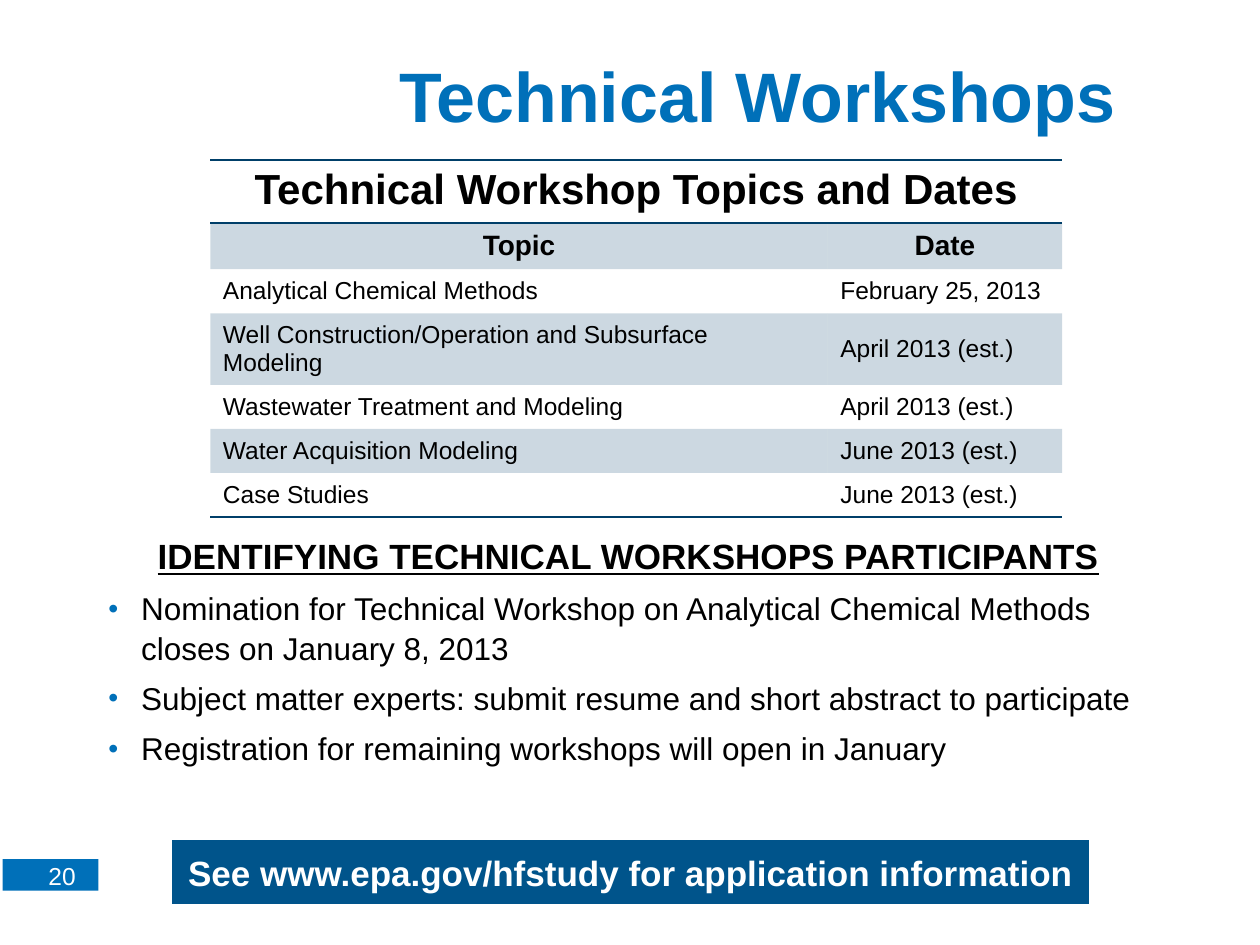
"""Build the Technical Workshops slide with its schedule table and notice."""
from dataclasses import dataclass
from typing import Any

from lxml import etree
from pptx import Presentation
from pptx.dml.color import RGBColor
from pptx.enum.shapes import MSO_SHAPE
from pptx.enum.text import MSO_ANCHOR, PP_ALIGN
from pptx.oxml.ns import qn
from pptx.util import Pt

LEFT, CENTER, RIGHT = PP_ALIGN.LEFT, PP_ALIGN.CENTER, PP_ALIGN.RIGHT
TOP, MIDDLE = MSO_ANCHOR.TOP, MSO_ANCHOR.MIDDLE
RECTANGLE = MSO_SHAPE.RECTANGLE
PLAIN_TABLE_STYLE = "{2D5ABB26-0587-4C30-8999-92F81FD0307C}"


@dataclass(frozen=True)
class Theme:
    font: str = "Arial"
    blue: str = "0070B9"
    banner: str = "00548B"
    navy: str = "003F69"
    black: str = "000000"
    white: str = "FFFFFF"
    title: float = 40
    table_title: float = 24
    heading: float = 20
    body: float = 18
    column_heading: float = 16
    small: float = 14


@dataclass(frozen=True)
class Box:
    left: float
    top: float
    width: float
    height: float

    def lengths(self) -> tuple:
        return Pt(self.left), Pt(self.top), Pt(self.width), Pt(self.height)


@dataclass(frozen=True)
class Style:
    size: float
    color: str = "000000"
    bold: bool = False
    underline: bool = False
    align: PP_ALIGN = LEFT


@dataclass(frozen=True)
class Workshop:
    topic: str
    date: str


THEME = Theme()
WORKSHOPS = [
    Workshop("Analytical Chemical Methods", "February 25, 2013"),
    Workshop("Well Construction/Operation and Subsurface Modeling", "April 2013 (est.)"),
    Workshop("Wastewater Treatment and Modeling", "April 2013 (est.)"),
    Workshop("Water Acquisition Modeling", "June 2013 (est.)"),
    Workshop("Case Studies", "June 2013 (est.)"),
]
PARTICIPANT_STEPS = [
    "Nomination for Technical Workshop on Analytical Chemical Methods closes on January 8, 2013",
    "Subject matter experts: submit resume and short abstract to participate",
    "Registration for remaining workshops will open in January",
]


def add_run(paragraph: Any, text: str, style: Style) -> None:
    paragraph.alignment = style.align
    run = paragraph.add_run()
    run.text = text
    run.font.name = THEME.font
    run.font.size = Pt(style.size)
    run.font.bold = style.bold
    run.font.underline = style.underline
    run.font.color.rgb = RGBColor.from_string(style.color)


def add_text_box(slide: Any, box: Box, anchor: MSO_ANCHOR, inset: bool = False) -> Any:
    frame = slide.shapes.add_textbox(*box.lengths()).text_frame
    frame.word_wrap = True
    frame.vertical_anchor = anchor
    if not inset:
        frame.margin_left = frame.margin_right = frame.margin_top = frame.margin_bottom = 0
    return frame


def add_rectangle(slide: Any, box: Box, color: str) -> Any:
    shape = slide.shapes.add_shape(RECTANGLE, *box.lengths())
    shape.shadow.inherit = False
    shape.fill.solid()
    shape.fill.fore_color.rgb = RGBColor.from_string(color)
    shape.line.fill.background()
    return shape


def set_bullet(paragraph: Any) -> None:
    properties = paragraph._p.get_or_add_pPr()
    properties.set("marL", str(Pt(18.7)))
    properties.set("indent", str(-Pt(18.7)))
    color = etree.SubElement(properties, qn("a:buClr"))
    etree.SubElement(color, qn("a:srgbClr"), val=THEME.blue)
    etree.SubElement(properties, qn("a:buSzPct"), val="90000")
    etree.SubElement(properties, qn("a:buFont"), typeface=THEME.font)
    etree.SubElement(properties, qn("a:buChar"), char="•")


def set_border(cell: Any, side: str) -> None:
    line = etree.Element(qn(f"a:{side}"), w=str(Pt(1)))
    fill = etree.SubElement(line, qn("a:solidFill"))
    etree.SubElement(fill, qn("a:srgbClr"), val=THEME.navy)
    cell._tc.get_or_add_tcPr().insert(0, line)


def fill_cell(cell: Any, shaded: bool) -> None:
    if not shaded:
        cell.fill.background()
        return
    cell.fill.solid()
    cell.fill.fore_color.rgb = RGBColor.from_string(THEME.navy)
    color = cell._tc.tcPr.find(f"{qn('a:solidFill')}/{qn('a:srgbClr')}")
    etree.SubElement(color, qn("a:alpha"), val="20000")


def add_schedule(slide: Any, box: Box) -> None:
    row_count = len(WORKSHOPS) + 2
    table = slide.shapes.add_table(row_count, 2, *box.lengths()).table
    table.first_row = table.horz_banding = False
    table._tbl.tblPr.find(qn("a:tableStyleId")).text = PLAIN_TABLE_STYLE
    for column, width in zip(table.columns, (352.8, 133.9)):
        column.width = Pt(width)
    for index, row in enumerate(table.rows):
        row.height = Pt(25.2 if index else 29.5)

    title_cell = table.cell(0, 0)
    title_cell.merge(table.cell(0, 1))
    add_run(title_cell.text_frame.paragraphs[0], "Technical Workshop Topics and Dates",
            Style(THEME.table_title, bold=True, align=CENTER))
    for cell in table.rows[0].cells:
        fill_cell(cell, False)
        set_border(cell, "lnB")
        set_border(cell, "lnT")

    heading = Style(THEME.column_heading, bold=True, align=CENTER)
    entry = Style(THEME.small)
    for index, workshop in enumerate([Workshop("Topic", "Date"), *WORKSHOPS], start=1):
        for column, text in enumerate((workshop.topic, workshop.date)):
            cell = table.cell(index, column)
            cell.vertical_anchor = MIDDLE
            add_run(cell.text_frame.paragraphs[0], text, heading if index == 1 else entry)
            fill_cell(cell, index % 2 == 1)
            if index == row_count - 1:
                set_border(cell, "lnB")


def add_participants(slide: Any, box: Box) -> None:
    frame = add_text_box(slide, box, TOP)
    heading = frame.paragraphs[0]
    add_run(heading, "IDENTIFYING TECHNICAL WORKSHOPS PARTICIPANTS",
            Style(THEME.heading, bold=True, underline=True, align=CENTER))
    for step in PARTICIPANT_STEPS:
        paragraph = frame.add_paragraph()
        set_bullet(paragraph)
        add_run(paragraph, step, Style(THEME.body))
    for paragraph in frame.paragraphs:
        paragraph.line_spacing = 1.05
        paragraph.space_after = Pt(6)


def main() -> None:
    presentation = Presentation()
    presentation.slide_width, presentation.slide_height = Pt(720), Pt(540)
    slide = presentation.slides.add_slide(presentation.slide_layouts[6])

    add_rectangle(slide, Box(1.5, 491, 54.7, 18), THEME.blue)
    number = add_text_box(slide, Box(0, 488.5, 50.4, 20), TOP, inset=True)
    add_run(number.paragraphs[0], "20", Style(THEME.small, THEME.white, align=RIGHT))
    add_participants(slide, Box(62, 304.5, 594, 186))
    title = add_text_box(slide, Box(180.7, 12.2, 504, 84.2), MIDDLE)
    add_run(title.paragraphs[0], "Technical Workshops",
            Style(THEME.title, THEME.blue, bold=True, align=CENTER))
    add_schedule(slide, Box(120.2, 91.4, 486.7, 180.7))
    banner = add_rectangle(slide, Box(97.2, 479, 526.3, 38.9), THEME.banner)
    banner.line.color.rgb = RGBColor.from_string(THEME.white)
    banner.line.width = Pt(2)
    banner.text_frame.word_wrap = True
    banner.text_frame.vertical_anchor = MIDDLE
    add_run(banner.text_frame.paragraphs[0], "See www.epa.gov/hfstudy for application information",
            Style(THEME.heading, THEME.white, bold=True, align=CENTER))
    presentation.save("out.pptx")


if __name__ == "__main__":
    main()
